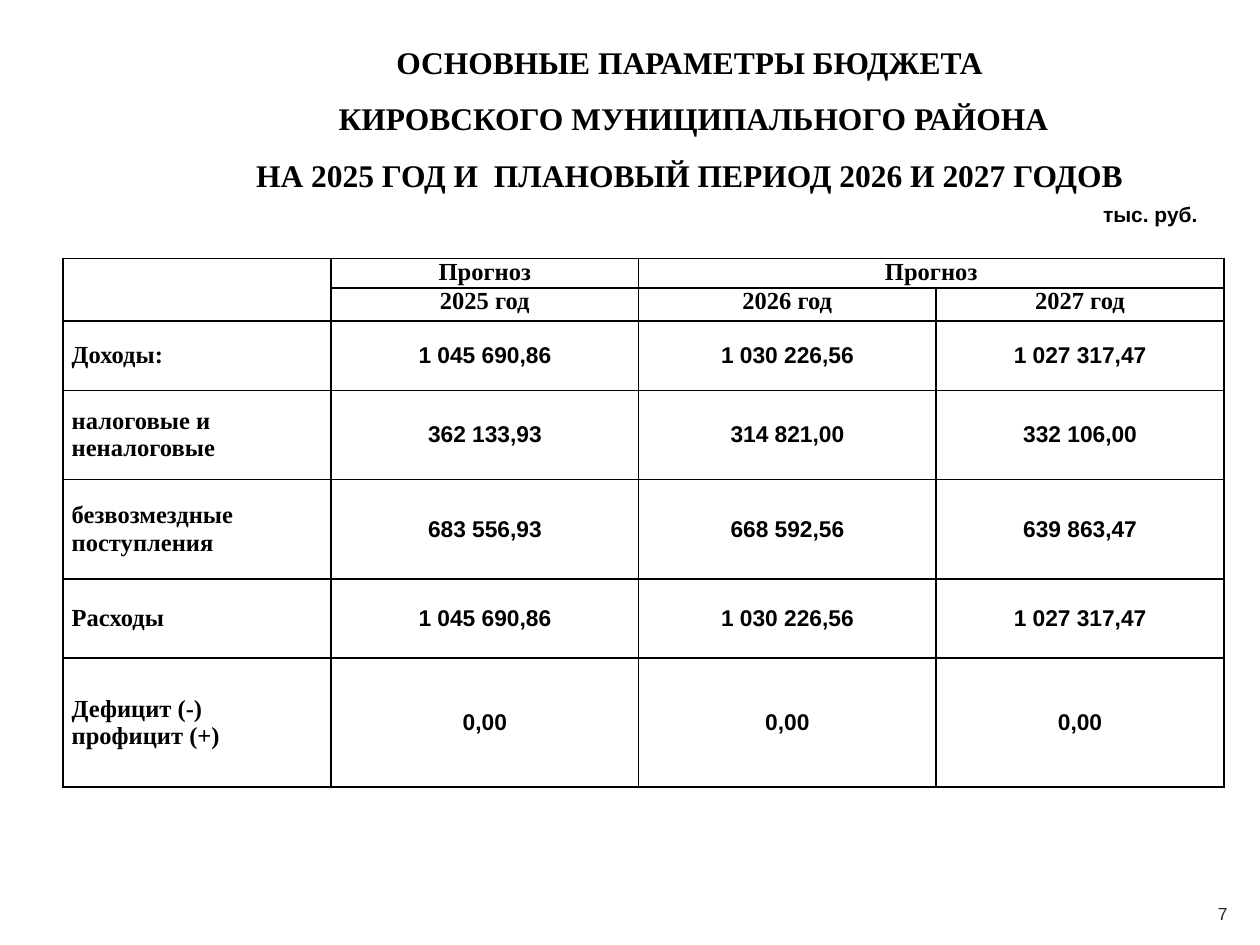
import pptx
import pptx.util
import pptx.dml.color
import pptx.enum.text
import pptx.oxml
import pptx.oxml.ns

Pt = pptx.util.Pt
ALIGN = pptx.enum.text.PP_ALIGN
ANCHOR = pptx.enum.text.MSO_ANCHOR
FIT = pptx.enum.text.MSO_AUTO_SIZE
SERIF, SANS = "Times New Roman", "Arial"
BLACK, GREY = "000000", "262626"

COLS = [153.2, 175.7, 170, 164.5]
ROWS = [16.9, 18.9, 39.7, 51.1, 56.6, 45.4, 73.7]
HEADS = [["", "Прогноз", "Прогноз", ""],
         ["", "2025 год", "2026 год", "2027 год"]]
BODY = [
    ["Доходы:", "1 045 690,86", "1 030 226,56", "1 027 317,47"],
    ["налоговые и неналоговые", "362 133,93", "314 821,00", "332 106,00"],
    ["безвозмездные поступления", "683 556,93", "668 592,56", "639 863,47"],
    ["Расходы", "1 045 690,86", "1 030 226,56", "1 027 317,47"],
    ["Дефицит (-)\nпрофицит (+)", "0,00", "0,00", "0,00"],
]


def color(code):
    return pptx.dml.color.RGBColor.from_string(code)


def write(frame, lines, size, face, tint=BLACK, bold=True,
          align=ALIGN.CENTER, space=None):
    for i, line in enumerate(lines):
        para = frame.add_paragraph() if i else frame.paragraphs[0]
        para.alignment = align
        if space:
            para.line_spacing = space
        run = para.add_run()
        run.text = line
        font = run.font
        font.size, font.name, font.bold = Pt(size), face, bold
        font.color.rgb = color(tint)


def add_text(slide, box, lines, size, face, wrap=True, fit=FIT.NONE,
             anchor=ANCHOR.TOP, **style):
    frame = slide.shapes.add_textbox(*map(Pt, box)).text_frame
    frame.word_wrap = wrap
    frame.auto_size = fit
    frame.vertical_anchor = anchor
    write(frame, lines, size, face, **style)


def add_title(slide, box):
    lines = ["ОСНОВНЫЕ ПАРАМЕТРЫ БЮДЖЕТА",
             " КИРОВСКОГО МУНИЦИПАЛЬНОГО РАЙОНА",
             "НА 2025 ГОД И  ПЛАНОВЫЙ ПЕРИОД 2026 И 2027 ГОДОВ"]
    add_text(slide, box, lines, 18, SERIF, fit=FIT.SHAPE_TO_FIT_TEXT,
             space=1.5)


def add_unit(slide, box):
    add_text(slide, box, ["тыс. руб."], 12, SANS, wrap=False,
             fit=FIT.SHAPE_TO_FIT_TEXT)


def add_number(slide, box):
    add_text(slide, box, ["7"], 10, SANS, anchor=ANCHOR.MIDDLE,
             tint=GREY, bold=False)


def frame_cell(cell):
    """Clear the fill and draw a thin black line on all four sides."""
    cell.fill.background()
    props = cell._tc.get_or_add_tcPr()
    space = pptx.oxml.ns.nsdecls("a")
    for i, side in enumerate("LRTB"):
        props.insert(i, pptx.oxml.parse_xml(
            f'<a:ln{side} {space} w="12700"><a:solidFill>'
            f'<a:srgbClr val="{BLACK}"/></a:solidFill></a:ln{side}>'))


def add_budget(slide, box):
    shape = slide.shapes.add_table(len(ROWS), len(COLS), *map(Pt, box))
    table = shape.table
    for col, width in zip(table.columns, COLS):
        col.width = Pt(width)
    for row, height in zip(table.rows, ROWS):
        row.height = Pt(height)
    for r, texts in enumerate(HEADS + BODY):
        head = r < len(HEADS)
        for c, text in enumerate(texts):
            cell = table.cell(r, c)
            frame_cell(cell)
            cell.margin_left = cell.margin_right = Pt(5)
            cell.margin_top = cell.margin_bottom = Pt(0)
            cell.vertical_anchor = ANCHOR.TOP if head else ANCHOR.MIDDLE
            if not text:
                cell.text_frame.paragraphs[0].font.size = Pt(12)
                continue
            label = head or c == 0
            write(cell.text_frame, text.split("\n"), 14 if label else 13,
                  SERIF if label else SANS,
                  align=ALIGN.CENTER if head or c else ALIGN.LEFT)
    table.cell(0, 0).merge(table.cell(1, 0))
    table.cell(0, 2).merge(table.cell(0, 3))


def main():
    deck = pptx.Presentation()
    deck.slide_width, deck.slide_height = Pt(720), Pt(540)
    slide = deck.slides.add_slide(deck.slide_layouts[6])
    add_number(slide, (680.4, 507.6, 36.7, 28.8))
    add_title(slide, (91.4, 10.1, 605.5, 105.1))
    add_unit(slide, (622.8, 111.6, 69.1, 21.6))
    add_budget(slide, (36, 147.6, sum(COLS), sum(ROWS)))
    deck.save("out.pptx")


if __name__ == "__main__":
    main()
